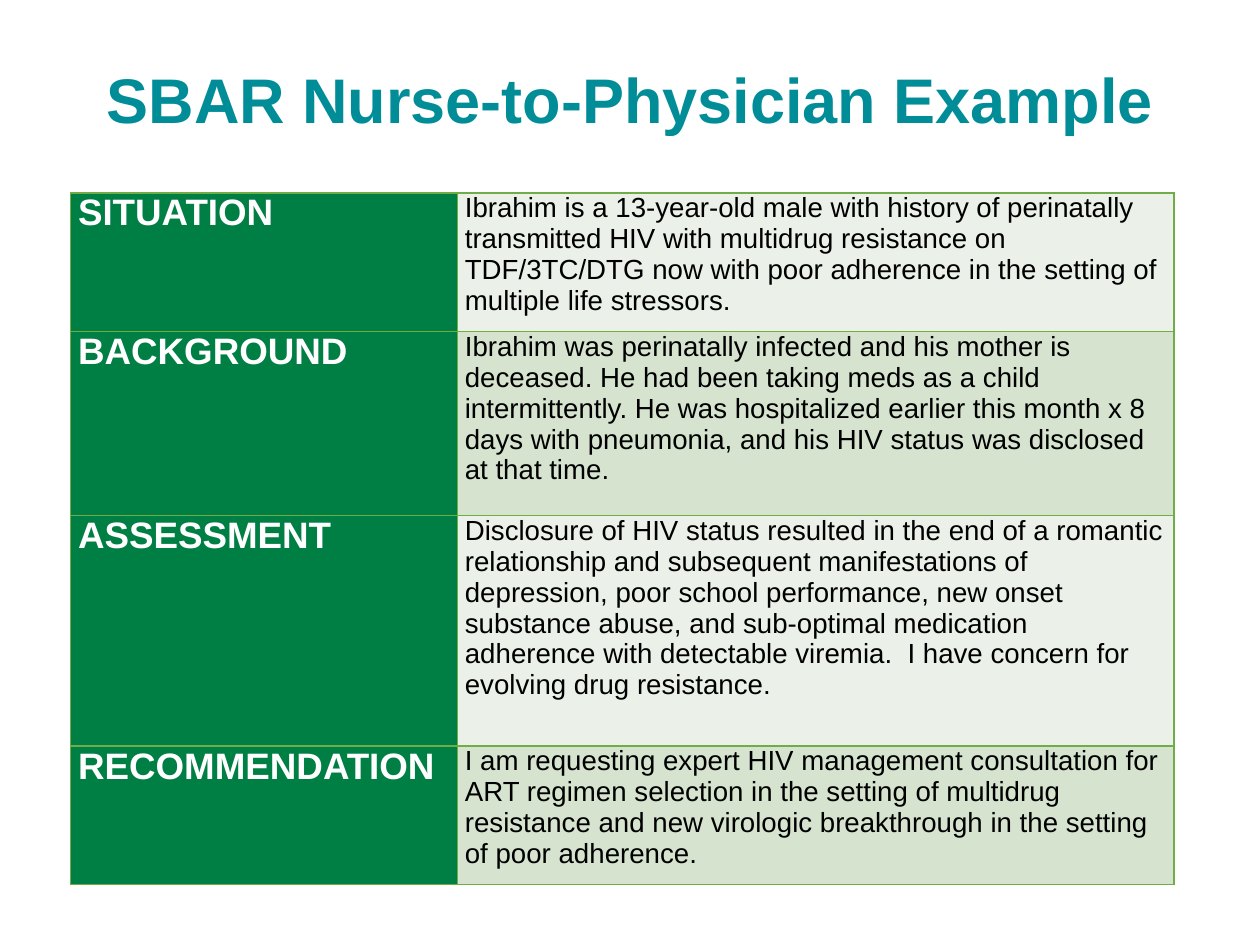
from lxml import etree
from pptx import Presentation
from pptx.dml.color import RGBColor
from pptx.enum.text import MSO_ANCHOR, PP_ALIGN
from pptx.oxml.ns import qn
from pptx.util import Inches, Pt

CENTER = PP_ALIGN.CENTER
LEFT = PP_ALIGN.LEFT
MIDDLE = MSO_ANCHOR.MIDDLE
TOP = MSO_ANCHOR.TOP

FONT = "Arial"
TEAL = "008D98"
GREEN = "007F44"
BORDER = "70AD47"
WHITE = "FFFFFF"
BLACK = "000000"
BANDS = ["EBF1E9", "D5E3CF"]

COLUMN_WIDTHS = [3.07, 5.69]
ROW_HEIGHTS = [1.1, 1.46, 1.83, 1.1]
SBAR_ROWS = [
    ("SITUATION",
     "Ibrahim is a 13-year-old male with history of perinatally transmitted HIV "
     "with multidrug resistance on TDF/3TC/DTG now with poor adherence in the "
     "setting of multiple life stressors."),
    ("BACKGROUND",
     "Ibrahim was perinatally infected and his mother is deceased. He had been "
     "taking meds as a child intermittently. He was hospitalized earlier this "
     "month x 8 days with pneumonia, and his HIV status was disclosed at that time."),
    ("ASSESSMENT",
     "Disclosure of HIV status resulted in the end of a romantic relationship and "
     "subsequent manifestations of depression, poor school performance, new onset "
     "substance abuse, and sub-optimal medication adherence with detectable "
     "viremia.  I have concern for evolving drug resistance."),
    ("RECOMMENDATION",
     "I am requesting expert HIV management consultation for ART regimen selection "
     "in the setting of multidrug resistance and new virologic breakthrough in the "
     "setting of poor adherence."),
]


def rgb(color):
    return RGBColor.from_string(color)


def write_text(text_frame, text, size, color, bold, alignment):
    text_frame.text = text
    paragraph = text_frame.paragraphs[0]
    paragraph.alignment = alignment
    font = paragraph.runs[0].font
    font.name = FONT
    font.size = Pt(size)
    font.bold = bold
    font.color.rgb = rgb(color)
    return paragraph


def add_title(slide, text):
    title = slide.shapes.title
    title.left, title.top = Inches(0.69), Inches(0.4)
    title.width, title.height = Inches(8.62), Inches(0.84)
    title.text_frame.vertical_anchor = MIDDLE
    paragraph = write_text(title.text_frame, text, 36, TEAL, True, CENTER)
    paragraph.line_spacing = 0.9


def add_borders(cell):
    properties = cell._tc.get_or_add_tcPr()
    for position, side in enumerate(["a:lnL", "a:lnR", "a:lnT", "a:lnB"]):
        line = etree.Element(qn(side), w=str(Pt(1)))
        fill = etree.SubElement(line, qn("a:solidFill"))
        etree.SubElement(fill, qn("a:srgbClr"), val=BORDER)
        properties.insert(position, line)


def format_cell(cell, text, size, color, bold, fill):
    cell.margin_left = cell.margin_right = Inches(0.06)
    cell.margin_top = cell.margin_bottom = 0
    cell.vertical_anchor = TOP
    cell.fill.solid()
    cell.fill.fore_color.rgb = rgb(fill)
    write_text(cell.text_frame, text, size, color, bold, LEFT)
    add_borders(cell)


def add_sbar_table(slide):
    table = slide.shapes.add_table(
        len(SBAR_ROWS), len(COLUMN_WIDTHS), Inches(0.56), Inches(1.53),
        Inches(sum(COLUMN_WIDTHS)), Inches(sum(ROW_HEIGHTS))).table
    for column, width in zip(table.columns, COLUMN_WIDTHS):
        column.width = Inches(width)
    for index, (heading, details) in enumerate(SBAR_ROWS):
        table.rows[index].height = Inches(ROW_HEIGHTS[index])
        format_cell(table.cell(index, 0), heading, 21, WHITE, True, GREEN)
        format_cell(table.cell(index, 1), details, 15.8, BLACK, False,
                    BANDS[index % len(BANDS)])


def main():
    presentation = Presentation()
    presentation.slide_width = Inches(10)
    presentation.slide_height = Inches(7.5)
    slide = presentation.slides.add_slide(presentation.slide_layouts[5])
    add_title(slide, "SBAR Nurse-to-Physician Example")
    add_sbar_table(slide)
    presentation.save("out.pptx")


if __name__ == "__main__":
    main()
